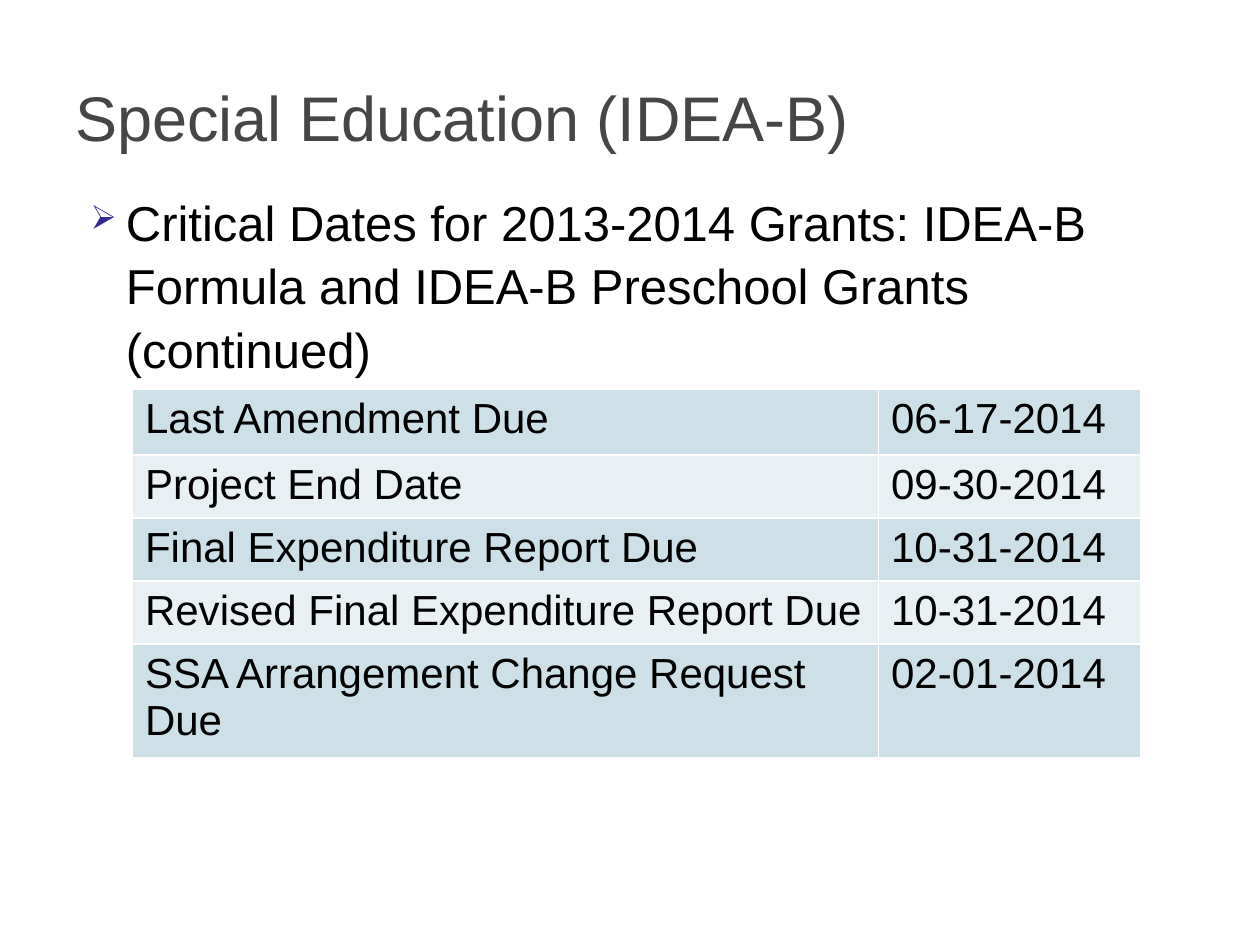
import pptx
import pptx.dml.color
import pptx.enum.text
import pptx.oxml
import pptx.oxml.ns
import pptx.util
from dataclasses import dataclass

Cm = pptx.util.Cm
Pt = pptx.util.Pt
Anchor = pptx.enum.text.MSO_ANCHOR


@dataclass(frozen=True)
class Theme:
    font: str = "Arial"
    title_size: int = 36
    body_size: int = 28
    cell_size: int = 24
    title_color: str = "464646"
    text_color: str = "000000"
    bullet_color: str = "34278D"
    border_color: str = "FFFFFF"
    bands: tuple = ("CDE0E8", "E8F0F4")


def rgb(value):
    return pptx.dml.color.RGBColor.from_string(value)


def add_xml(parent, xml):
    namespaces = pptx.oxml.ns.nsdecls("a")
    parent.append(pptx.oxml.parse_xml(xml.replace(" ", f" {namespaces} ", 1)))


class SlideBuilder:
    def __init__(self, slide, theme):
        self.slide = slide
        self.theme = theme

    def style(self, paragraph, size, color):
        formats = {"name": self.theme.font, "size": Pt(size)}
        for run in paragraph.runs:
            for attribute, value in formats.items():
                setattr(run.font, attribute, value)
            run.font.color.rgb = rgb(color)

    def text(self, words, place, size, color, anchor=Anchor.TOP):
        frame = self.slide.shapes.add_textbox(*map(Cm, place)).text_frame
        for attribute, value in {"word_wrap": True, "vertical_anchor": anchor}.items():
            setattr(frame, attribute, value)
        paragraph = frame.paragraphs[0]
        paragraph.text = words
        self.style(paragraph, size, color)
        return paragraph

    def bullet(self, words, place):
        paragraph = self.text(words, place, self.theme.body_size, self.theme.text_color)
        paragraph.line_spacing = 1.08
        properties = paragraph._p.get_or_add_pPr()
        properties.set("marL", str(Cm(1.02)))
        properties.set("indent", str(Cm(-0.71)))
        add_xml(properties, f'<a:buClr ><a:srgbClr val="{self.theme.bullet_color}"/></a:buClr>')
        add_xml(properties, '<a:buSzPct val="68000"/>')
        add_xml(properties, '<a:buChar char="➢"/>')

    def table(self, rows, left, top, widths, heights):
        grid = self.slide.shapes.add_table(
            len(rows), len(widths), Cm(left), Cm(top), Cm(sum(widths)), Cm(sum(heights))
        ).table
        for attribute in ("first_row", "horz_banding"):
            setattr(grid, attribute, False)
        for column, width in zip(grid.columns, widths):
            column.width = Cm(width)
        for index, (row, height) in enumerate(zip(grid.rows, heights)):
            row.height = Cm(height)
            for cell, words in zip(row.cells, rows[index]):
                cell.text = words
                self.style(cell.text_frame.paragraphs[0], self.theme.cell_size, self.theme.text_color)
                self.borders(cell)
                cell.fill.solid()
                cell.fill.fore_color.rgb = rgb(self.theme.bands[index % 2])

    def borders(self, cell):
        properties = cell._tc.get_or_add_tcPr()
        for side in "LRTB":
            add_xml(properties, f'<a:ln{side} w="{Pt(1)}"><a:solidFill>'
                    f'<a:srgbClr val="{self.theme.border_color}"/></a:solidFill></a:ln{side}>')


def main():
    presentation = pptx.Presentation()
    presentation.slide_width, presentation.slide_height = Cm(25.4), Cm(19.05)
    theme = Theme()
    builder = SlideBuilder(presentation.slides.add_slide(presentation.slide_layouts[6]), theme)

    # Heading and introduction
    builder.bullet(
        "Critical Dates for 2013-2014 Grants: IDEA-B Formula and IDEA-B Preschool Grants (continued)",
        (1.27, 3.66, 22.86, 13.03),
    )
    builder.text("Special Education (IDEA-B)", (1.27, 0.76, 22.86, 3.18),
                 theme.title_size, theme.title_color, Anchor.MIDDLE)

    # Critical dates
    critical_dates = [
        ("Last Amendment Due", "06-17-2014"),
        ("Project End Date", "09-30-2014"),
        ("Final Expenditure Report Due", "10-31-2014"),
        ("Revised Final Expenditure Report Due", "10-31-2014"),
        ("SSA Arrangement Change Request Due", "02-01-2014"),
    ]
    builder.table(critical_dates, 2.67, 7.85, (15.04, 5.28), [1.32] + [1.04] * 4)

    presentation.save("out.pptx")


if __name__ == "__main__":
    main()
